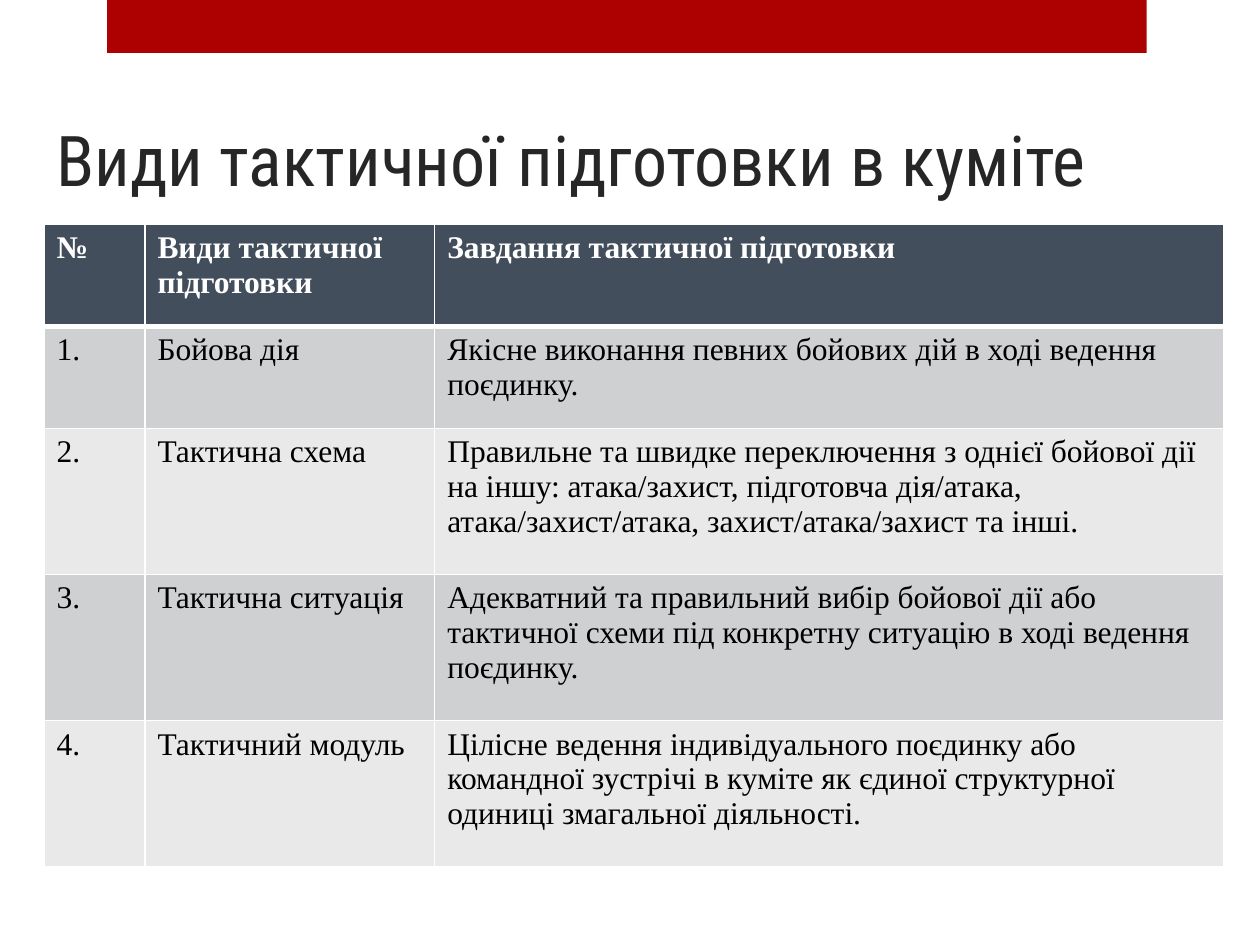
from dataclasses import dataclass

from lxml import etree
from pptx import Presentation
from pptx.dml.color import RGBColor
from pptx.enum.shapes import MSO_SHAPE
from pptx.enum.text import MSO_ANCHOR
from pptx.oxml.ns import qn
from pptx.util import Inches, Pt

RECTANGLE = MSO_SHAPE.RECTANGLE
BOTTOM = MSO_ANCHOR.BOTTOM
BLANK_LAYOUT = 6


@dataclass(frozen=True)
class Theme:
    accent: str = "AD0101"
    title: str = "262626"
    header: str = "424E5B"
    header_text: str = "FFFFFF"
    body_text: str = "000000"
    bands: tuple = ("CFD0D2", "E9E9EA")
    border: str = "FFFFFF"
    title_font: str = "Roboto Condensed"
    table_font: str = "Times New Roman"
    title_size: int = 40
    table_size: int = 18
    thin: int = 1
    thick: int = 3


THEME = Theme()
WIDTH, HEIGHT = Inches(10), Inches(7.5)
LEFT = 0.35
TABLE_TOP = 1.78
COLUMNS = (0.8, 2.3, 6.26)
SHORT_ROW, TALL_ROW = 0.81, 1.16
ROW_HEIGHTS = (SHORT_ROW,) * 2 + (TALL_ROW,) * 3

TITLE = "Види тактичної підготовки в куміте"
HEADINGS = ("№", "Види тактичної підготовки", "Завдання тактичної підготовки")
TRAINING_KINDS = (
    ("Бойова дія",
     "Якісне виконання певних бойових дій в ході ведення поєдинку."),
    ("Тактична схема",
     "Правильне та швидке переключення з однієї бойової дії на іншу: "
     "атака/захист, підготовча дія/атака, атака/захист/атака, "
     "захист/атака/захист та інші."),
    ("Тактична ситуація",
     "Адекватний та правильний вибір бойової дії або тактичної схеми "
     "під конкретну ситуацію в ході ведення поєдинку."),
    ("Тактичний модуль",
     "Цілісне ведення індивідуального поєдинку або командної зустрічі "
     "в куміте як єдиної структурної одиниці змагальної діяльності."),
)


def style_font(font, name, size, color, bold=False):
    font.name = name
    font.size = Pt(size)
    font.bold = bold
    font.color.rgb = RGBColor.from_string(color)


def add_banner(slide):
    banner = slide.shapes.add_shape(
        RECTANGLE, Inches(0.85), 0, Inches(8.25), Inches(0.42))
    banner.shadow.inherit = False
    banner.fill.solid()
    banner.fill.fore_color.rgb = RGBColor.from_string(THEME.accent)
    banner.line.fill.background()


def add_title(slide):
    box = slide.shapes.add_textbox(
        Inches(LEFT), Inches(0.44), WIDTH - Inches(LEFT), Inches(1.2))
    frame = box.text_frame
    frame.word_wrap = True
    frame.vertical_anchor = BOTTOM
    paragraph = frame.paragraphs[0]
    paragraph.text = TITLE
    style_font(paragraph.font, THEME.title_font, THEME.title_size, THEME.title)


def set_borders(cell, top, bottom):
    properties = cell._tc.get_or_add_tcPr()
    widths = {"a:lnL": THEME.thin, "a:lnR": THEME.thin,
              "a:lnT": top, "a:lnB": bottom}
    for position, (tag, width) in enumerate(widths.items()):
        line = etree.Element(qn(tag), w=str(Pt(width)))
        fill = etree.SubElement(line, qn("a:solidFill"))
        etree.SubElement(fill, qn("a:srgbClr"), val=THEME.border)
        properties.insert(position, line)


def fill_cell(cell, text, row):
    is_header = row == 0
    background = THEME.header if is_header else THEME.bands[(row - 1) % 2]
    color = THEME.header_text if is_header else THEME.body_text
    cell.fill.solid()
    cell.fill.fore_color.rgb = RGBColor.from_string(background)
    paragraph = cell.text_frame.paragraphs[0]
    paragraph.text = text
    style_font(paragraph.font, THEME.table_font, THEME.table_size, color, is_header)
    set_borders(cell,
                top=THEME.thick if row == 1 else THEME.thin,
                bottom=THEME.thick if is_header else THEME.thin)


def add_training_table(slide):
    rows = [HEADINGS] + [
        (f"{number}.", kind, task)
        for number, (kind, task) in enumerate(TRAINING_KINDS, 1)]
    table = slide.shapes.add_table(
        len(rows), len(COLUMNS), Inches(LEFT), Inches(TABLE_TOP),
        Inches(sum(COLUMNS)), Inches(sum(ROW_HEIGHTS))).table
    for column, width in zip(table.columns, COLUMNS):
        column.width = Inches(width)
    for row, height in zip(table.rows, ROW_HEIGHTS):
        row.height = Inches(height)
    for row, texts in enumerate(rows):
        for column, text in enumerate(texts):
            fill_cell(table.cell(row, column), text, row)


def main():
    presentation = Presentation()
    presentation.slide_width = WIDTH
    presentation.slide_height = HEIGHT
    slide = presentation.slides.add_slide(presentation.slide_layouts[BLANK_LAYOUT])
    add_banner(slide)
    add_title(slide)
    add_training_table(slide)
    presentation.save("out.pptx")


if __name__ == "__main__":
    main()
